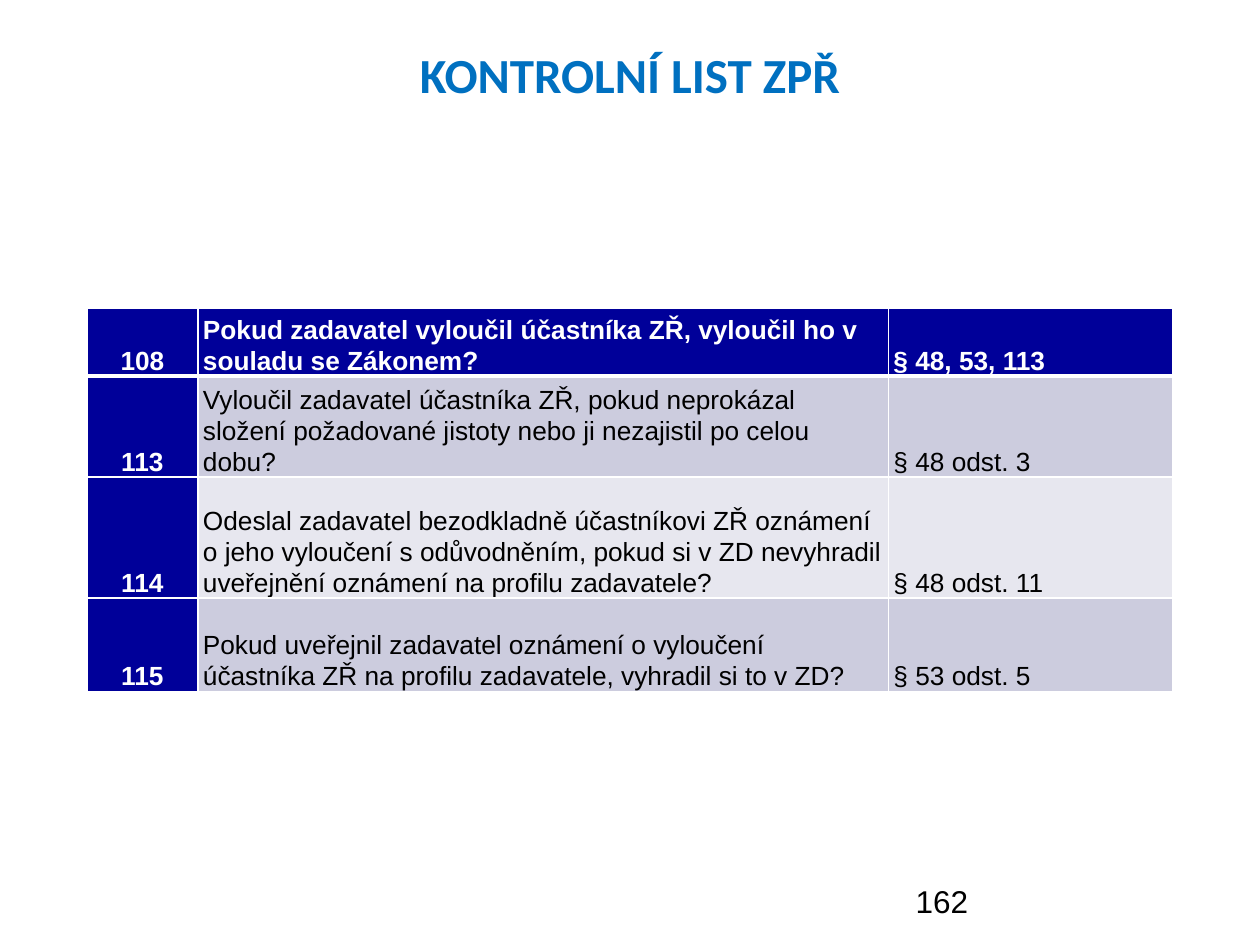
from lxml.etree import SubElement
from pptx import Presentation
from pptx.dml.color import RGBColor
from pptx.enum.text import MSO_ANCHOR, PP_ALIGN
from pptx.oxml.ns import qn
from pptx.util import Pt

COLORS = {
    "title": "0070C0",
    "header": "000099",
    "odd": "CCCCDE",
    "even": "E7E7EF",
    "white": "FFFFFF",
    "black": "000000",
}


def write(tf, text, size, color="black", font="Arial", bold=False,
          align=PP_ALIGN.LEFT, spacing=None):
    tf.word_wrap = True
    p = tf.paragraphs[0]
    p.alignment = align
    p.line_spacing = spacing
    r = p.add_run()
    r.text = text
    r.font.size = Pt(size)
    r.font.name = font
    r.font.bold = bold
    r.font.color.rgb = RGBColor.from_string(COLORS[color])


def set_borders(cell, **widths):
    tcPr = cell._tc.get_or_add_tcPr()
    for side in ("L", "R", "T", "B"):
        ln = SubElement(tcPr, qn(f"a:ln{side}"), w=str(Pt(widths.get(side, 1))))
        fill = SubElement(ln, qn("a:solidFill"))
        SubElement(fill, qn("a:srgbClr"), val=COLORS["white"])


prs = Presentation()
prs.slide_width, prs.slide_height = Pt(720), Pt(540)
s = prs.slides.add_slide(prs.slide_layouts[6])

title = s.shapes.add_textbox(Pt(36), Pt(21.6), Pt(648), Pt(90))
write(title.text_frame, "KONTROLNÍ LIST ZPŘ", 28, color="title",
      font="Calibri", bold=True, align=PP_ALIGN.CENTER)

rows = [
    ("108", "Pokud zadavatel vyloučil účastníka ZŘ, vyloučil ho v souladu se Zákonem?",
     "§ 48, 53, 113"),
    ("113", "Vyloučil zadavatel účastníka ZŘ, pokud neprokázal složení požadované "
     "jistoty nebo ji nezajistil po celou dobu?", "§ 48 odst. 3"),
    ("114", "Odeslal zadavatel bezodkladně účastníkovi ZŘ oznámení o jeho vyloučení "
     "s odůvodněním, pokud si v ZD nevyhradil uveřejnění oznámení na profilu "
     "zadavatele?", "§ 48 odst. 11"),
    ("115", "Pokud uveřejnil zadavatel oznámení o vyloučení účastníka ZŘ na profilu "
     "zadavatele, vyhradil si to v ZD?", "§ 53 odst. 5"),
]
col_widths = [63.4, 394.6, 162.7]
row_heights = [37.4, 44.6, 69.1, 53.3]

table = s.shapes.add_table(len(rows), len(col_widths), Pt(49.7), Pt(176.4),
                           Pt(sum(col_widths)), Pt(sum(row_heights))).table
for col, width in zip(table.columns, col_widths):
    col.width = Pt(width)
for row, height in zip(table.rows, row_heights):
    row.height = Pt(height)

for i, texts in enumerate(rows):
    for j, text in enumerate(texts):
        cell = table.cell(i, j)
        heading = i == 0 or j == 0
        cell.vertical_anchor = MSO_ANCHOR.BOTTOM
        cell.margin_left = cell.margin_right = Pt(2.9)
        cell.margin_top = cell.margin_bottom = Pt(0)
        set_borders(cell, T=3 if i == 1 else 1, B=3 if i == 0 else 1)
        cell.fill.solid()
        fill = "header" if heading else "odd" if i % 2 else "even"
        cell.fill.fore_color.rgb = RGBColor.from_string(COLORS[fill])
        write(cell.text_frame, text, 15, color="white" if heading else "black",
              bold=heading, spacing=1.07,
              align=PP_ALIGN.CENTER if j == 0 else PP_ALIGN.LEFT)

number = s.shapes.add_textbox(Pt(516.2), Pt(500.4), Pt(167.8), Pt(28.8))
write(number.text_frame, "162", 18)

prs.save("out.pptx")
